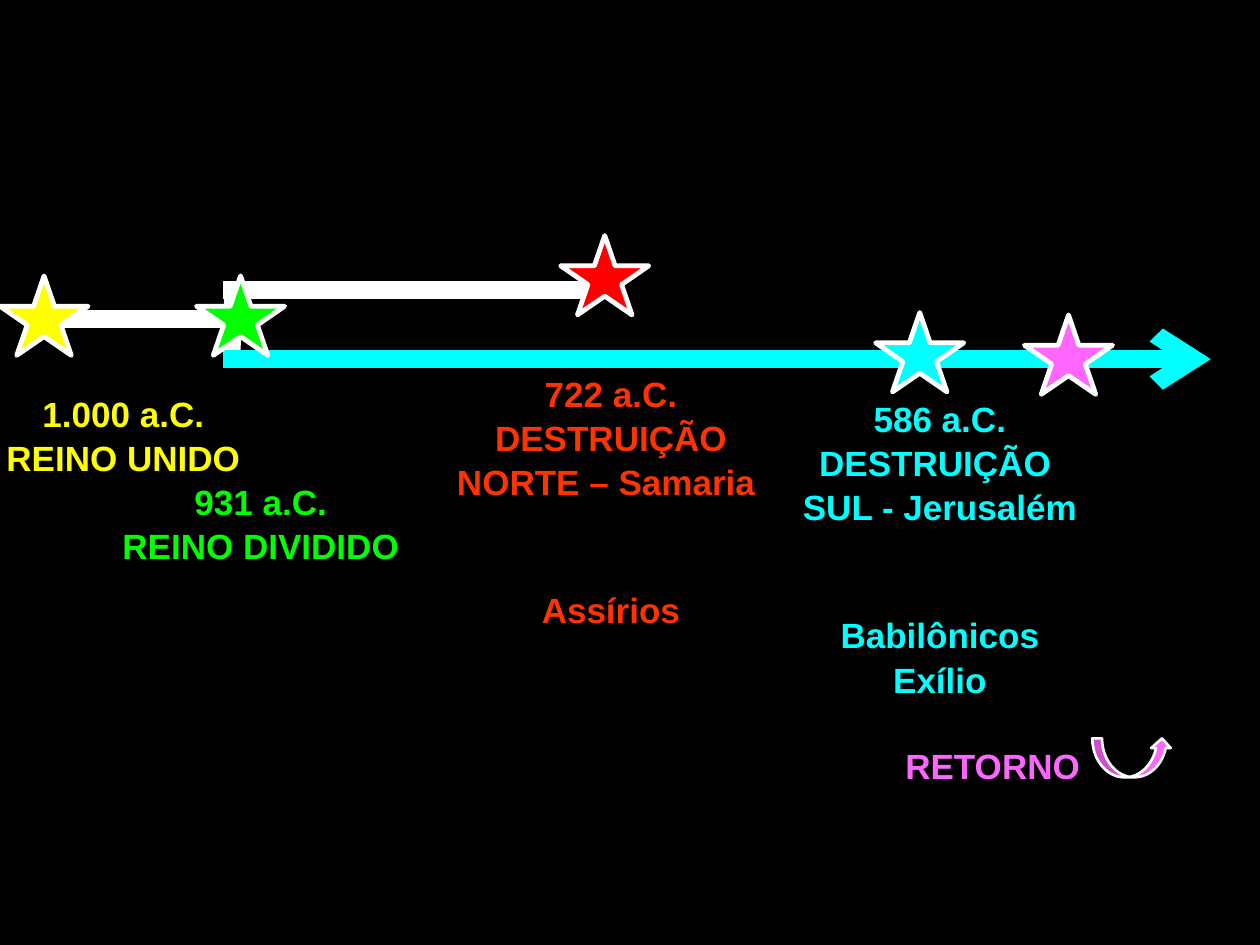
from dataclasses import dataclass

from lxml.etree import SubElement
from pptx import Presentation
from pptx.dml.color import RGBColor
from pptx.enum.shapes import MSO_CONNECTOR, MSO_SHAPE
from pptx.enum.text import MSO_AUTO_SIZE, PP_ALIGN
from pptx.oxml.ns import qn
from pptx.util import Pt

BLACK = RGBColor(0, 0, 0)
WHITE = RGBColor(255, 255, 255)
YELLOW = RGBColor(255, 255, 0)
GREEN = RGBColor(0, 255, 0)
RED = RGBColor(255, 0, 0)
ORANGE = RGBColor(255, 51, 0)
CYAN = RGBColor(0, 255, 255)
PINK = RGBColor(255, 102, 255)

FONT = "Arial"
SIZE = 20
ROW = 24


@dataclass
class Line:
    x1: float
    y1: float
    x2: float
    y2: float
    color: RGBColor = WHITE
    arrow: bool = False


@dataclass
class Mark:
    x: float
    y: float
    color: RGBColor
    w: float = 50.4
    h: float = 45.4
    kind: MSO_SHAPE = MSO_SHAPE.STAR_5_POINT
    edge: float = 2.75


@dataclass
class Row:
    text: str
    skip: int = 0
    color: RGBColor | None = None
    align: PP_ALIGN = PP_ALIGN.CENTER


@dataclass
class Label:
    x: float
    y: float
    w: float
    h: float
    color: RGBColor
    rows: list[Row]


LINES = [
    Line(28, 182.2, 132.5, 182.2),
    Line(133.2, 163.4, 132.5, 201.6),
    Line(127.4, 165.6, 353.5, 165.6),
    Line(127.4, 205.2, 691.9, 205.2, CYAN, True),
]

MARKS = [
    Mark(0, 157.7, YELLOW),
    Mark(112.3, 157.7, GREEN),
    Mark(320.4, 134.6, RED),
    Mark(500.4, 178.6, CYAN),
    Mark(585.4, 180, PINK),
    Mark(624.2, 421.9, PINK, 45.4, 22.3, MSO_SHAPE.CURVED_UP_ARROW, 1.5),
]

LABELS = [
    Label(-16.6, 219.6, 174.2, 55.4, YELLOW,
          [Row("1.000 a.C."), Row("REINO UNIDO")]),
    Label(61.9, 270, 174.2, 55.4, GREEN,
          [Row("931 a.C."), Row("REINO DIVIDIDO")]),
    Label(253.4, 208.1, 191.5, 152.6, ORANGE,
          [Row("722 a.C."), Row("DESTRUIÇÃO"), Row("NORTE – Samaria "),
           Row("Assírios", 2)]),
    Label(450, 222.5, 174.2, 225.4, CYAN,
          [Row("586 a.C."), Row("DESTRUIÇÃO "), Row("SUL - Jerusalém"),
           Row("Babilônicos Exílio", 2),
           Row("RETORNO", 1, PINK, PP_ALIGN.RIGHT)]),
]


def write(para, text: str, *, color: RGBColor, align: PP_ALIGN,
          before: float = 0, size: float = SIZE, bold: bool = True) -> None:
    para.alignment = align
    para.space_before = Pt(before)
    para.line_spacing = 1.05
    run = para.add_run()
    run.text = text
    run.font.name = FONT
    run.font.size = Pt(size)
    run.font.bold = bold
    run.font.color.rgb = color


def draw_line(slide, line: Line) -> None:
    link = slide.shapes.add_connector(
        MSO_CONNECTOR.STRAIGHT,
        Pt(line.x1), Pt(line.y1), Pt(line.x2), Pt(line.y2))
    link.line.color.rgb = line.color
    link.line.width = Pt(10)
    if line.arrow:
        SubElement(link.line._get_or_add_ln(), qn("a:tailEnd"), type="arrow")
    SubElement(link._element.spPr, qn("a:effectLst"))


def draw_mark(slide, mark: Mark) -> None:
    shape = slide.shapes.add_shape(
        mark.kind, Pt(mark.x), Pt(mark.y), Pt(mark.w), Pt(mark.h))
    shape.shadow.inherit = False
    shape.fill.solid()
    shape.fill.fore_color.rgb = mark.color
    shape.line.color.rgb = WHITE
    shape.line.width = Pt(mark.edge)


def draw_label(slide, label: Label) -> None:
    box = slide.shapes.add_textbox(
        Pt(label.x), Pt(label.y), Pt(label.w), Pt(label.h))
    frame = box.text_frame
    frame.word_wrap = True
    frame.auto_size = MSO_AUTO_SIZE.SHAPE_TO_FIT_TEXT
    for i, row in enumerate(label.rows):
        para = frame.add_paragraph() if i else frame.paragraphs[0]
        write(para, row.text, color=row.color or label.color,
              align=row.align, before=row.skip * ROW)


def main() -> None:
    deck = Presentation()
    deck.slide_width, deck.slide_height = Pt(720), Pt(540)
    slide = deck.slides.add_slide(deck.slide_layouts[6])
    slide.background.fill.solid()
    slide.background.fill.fore_color.rgb = BLACK
    for line in LINES:
        draw_line(slide, line)
    for mark in MARKS:
        draw_mark(slide, mark)
    for label in LABELS:
        draw_label(slide, label)
    deck.save("out.pptx")


if __name__ == "__main__":
    main()
